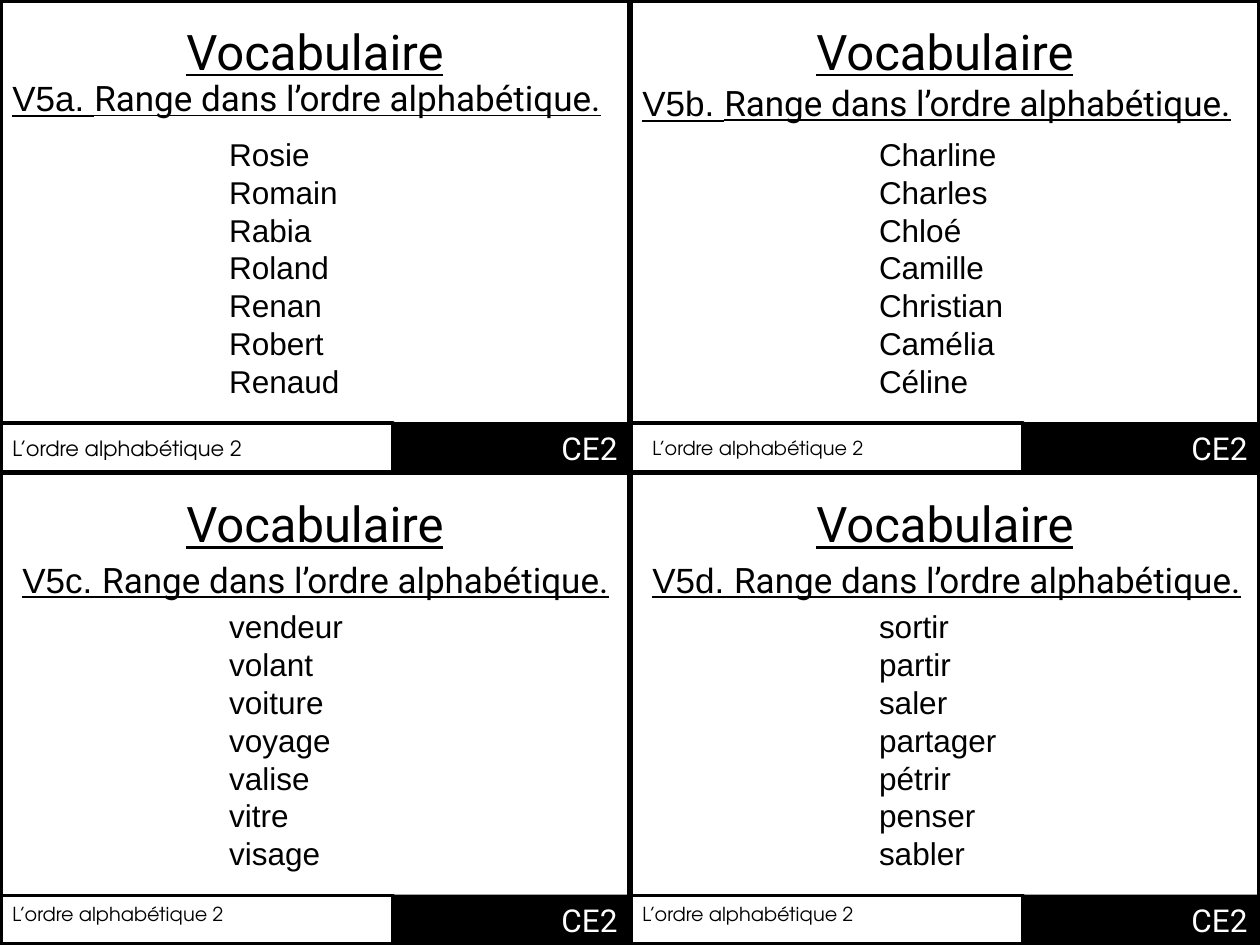
"""Builds a sheet of four vocabulary cards on alphabetical order."""
from lxml.etree import SubElement
from pptx import Presentation
from pptx.dml.color import RGBColor
from pptx.enum.shapes import MSO_SHAPE
from pptx.enum.text import MSO_ANCHOR, MSO_AUTO_SIZE, PP_ALIGN
from pptx.oxml.ns import qn
from pptx.util import Cm, Pt

BLACK = RGBColor(0, 0, 0)
WHITE = RGBColor(255, 255, 255)
WIDE, HIGH = 25.4 / 2, 19.05 / 2
SPLIT = 7.92

CARDS = [
    ("V5a. ", (0, 1.42), (0, 8.66, 12), 4.37,
     "Rosie Romain Rabia Roland Renan Robert Renaud"),
    ("V5b. ", (0, 1.52), (0.2, 8.66, 11), 4.77,
     "Charline Charles Chloé Camille Christian Camélia Céline"),
    ("V5c. ", (0.2, 1.6), (0, 8.53, 11), 4.37,
     "vendeur volant voiture voyage valise vitre visage"),
    ("V5d. ", (0.2, 1.6), (0, 8.53, 11), 4.77,
     "sortir partir saler partager pétrir penser sabler"),
]


class Sheet:
    def __init__(self, slide):
        self.slide = slide
        self.shapes = slide.shapes
        self.head, self.body, self.note = "Roboto", "Arial", "TeX Gyre Adventor"

    def font(self, run, name, size, color=BLACK, line=False):
        font = run.font
        font.name, font.size, font.bold = name, Pt(size), False
        font.color.rgb = color
        if line:
            font.underline = True

    def frame(self, shape):
        frame = shape.text_frame
        frame.word_wrap = True
        frame.auto_size = MSO_AUTO_SIZE.SHAPE_TO_FIT_TEXT
        frame.vertical_anchor = MSO_ANCHOR.TOP
        frame.margin_left = frame.margin_right = Cm(0.25)
        frame.margin_top = frame.margin_bottom = Cm(0.13)
        return frame

    def place(self, spot, left, top, wide, high):
        shape = self.slide.placeholders[spot]
        shape.left, shape.top = Cm(left), Cm(top)
        shape.width, shape.height = Cm(wide), Cm(high)
        self.shapes.element.append(shape.element)
        return shape

    def text(self, left, top, wide, high):
        return self.shapes.add_textbox(Cm(left), Cm(top), Cm(wide), Cm(high))

    def box(self, left, top, wide, high, fill=None, line=0):
        shape = self.shapes.add_shape(
            MSO_SHAPE.RECTANGLE, Cm(left), Cm(top), Cm(wide), Cm(high))
        shape.shadow.inherit = False
        if fill is None:
            shape.fill.background()
        else:
            shape.fill.solid()
            shape.fill.fore_color.rgb = fill
        if line:
            shape.line.color.rgb = BLACK
            shape.line.width = Pt(line)
        else:
            shape.line.fill.background()
        return shape

    def label(self, shape, words, name, size, align=PP_ALIGN.LEFT,
              color=BLACK, line=False):
        frame = self.frame(shape)
        frame.text = words
        para = frame.paragraphs[0]
        para.alignment = align
        self.font(para.runs[0], name, size, color, line)
        return para

    def title(self, left, top, first):
        area = left, top + 0.3, WIDE, 1.45
        shape = self.place(0, *area) if first else self.text(*area)
        self.label(shape, "Vocabulaire", self.head, 28, PP_ALIGN.CENTER, line=True)

    def task(self, left, top, code):
        shape = self.text(left, top, 12.5, 1.12)
        para = self.label(shape, code, self.body, 20, line=True)
        run = para.add_run()
        run.text = "Range dans l’ordre alphabétique."
        self.font(run, self.head, 20, line=True)

    def foot(self, left, top, note):
        band = self.box(left + SPLIT, top + 8.51, WIDE - SPLIT, 1.02, BLACK)
        self.label(band, "CE2", self.head, 18, PP_ALIGN.RIGHT, WHITE)
        self.box(left, top + 8.53, SPLIT, 0.99, line=2)
        shift, drop, size = note
        shape = self.text(left + shift, top + drop, SPLIT, 0.75)
        self.label(shape, "L’ordre alphabétique 2", self.note, size)

    def words(self, spot, left, top, words):
        frame = self.frame(self.place(spot, left, top, 3.18, 5.64))
        frame.text = "\n".join(words.split())
        for para in frame.paragraphs:
            para.line_spacing = Pt(21.6)
            para.space_before = para.space_after = Pt(0)
            self.font(para.runs[0], self.body, 18)
            props = para._p.get_or_add_pPr()
            props.set("marL", "0")
            props.set("indent", "0")
            SubElement(props, qn("a:buNone"))


def main():
    deck = Presentation()
    deck.slide_width, deck.slide_height = Cm(2 * WIDE), Cm(2 * HIGH)
    sheet = Sheet(deck.slides.add_slide(deck.slide_layouts[4]))
    spots = [(col * WIDE, row * HIGH) for row in range(2) for col in range(2)]
    for left, top in spots:
        sheet.box(left, top, WIDE, HIGH, WHITE, 3)
    for spot, ((left, top), card) in enumerate(zip(spots, CARDS), 1):
        code, (shift, drop), note, inset, words = card
        sheet.title(left, top, spot == 1)
        sheet.task(left + shift, top + drop, code)
        sheet.foot(left, top, note)
        sheet.words(spot, left + inset, top + 2.59, words)
    deck.save("out.pptx")


if __name__ == "__main__":
    main()
